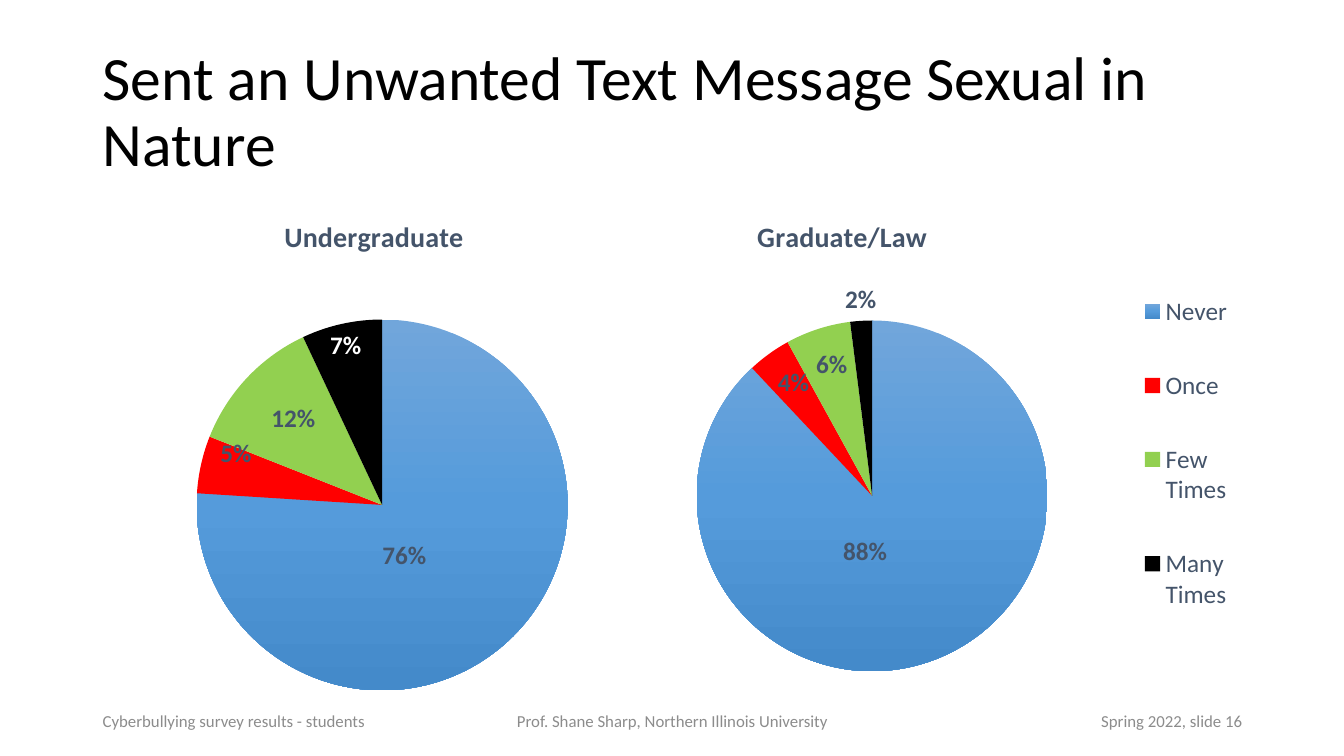
"""Build the survey slide with two pie charts about unwanted text messages."""
import math

import copy
import lxml.etree
import pptx
import pptx.chart.data
import pptx.dml.color
import pptx.enum.chart
import pptx.enum.text
import pptx.oxml.ns
import pptx.util

Inches = pptx.util.Inches
RGBColor = pptx.dml.color.RGBColor
ALIGN = pptx.enum.text.PP_ALIGN
LABEL_POSITION = pptx.enum.chart.XL_LABEL_POSITION
qn = pptx.oxml.ns.qn

FONT = "Calibri"
BLACK = RGBColor(0x00, 0x00, 0x00)
WHITE = RGBColor(0xFF, 0xFF, 0xFF)
GRAY = RGBColor(0x8C, 0x8C, 0x8C)
SLATE = RGBColor(0x44, 0x54, 0x6A)
RED = RGBColor(0xFF, 0x00, 0x00)
GREEN = RGBColor(0x92, 0xD0, 0x50)
BLUES = [RGBColor(0x71, 0xA6, 0xDB), RGBColor(0x55, 0x9B, 0xDB), RGBColor(0x44, 0x8A, 0xCA)]

deck = pptx.Presentation()
deck.slide_width, deck.slide_height = Inches(13.33), Inches(7.5)
slide = deck.slides.add_slide(deck.slide_layouts[6])


def add_text(text, left, top, width, height, size=12, color=GRAY, align=ALIGN.LEFT, spacing=1.0):
    frame = slide.shapes.add_textbox(
        Inches(left), Inches(top), Inches(width), Inches(height)).text_frame
    frame.word_wrap = True
    frame.vertical_anchor = pptx.enum.text.MSO_ANCHOR.MIDDLE
    paragraph = frame.paragraphs[0]
    paragraph.text, paragraph.alignment, paragraph.line_spacing = text, align, spacing
    font = paragraph.runs[0].font
    font.name, font.size, font.color.rgb = FONT, pptx.util.Pt(size), color


def set_layout(parent, index, **values):
    for old in parent.findall(qn("c:layout")):
        parent.remove(old)
    layout = lxml.etree.Element(qn("c:layout"))
    manual = lxml.etree.SubElement(layout, qn("c:manualLayout"))
    for name, value in values.items():
        lxml.etree.SubElement(manual, qn("c:" + name)).set("val", str(value))
    parent.insert(index, layout)


add_text("Sent an Unwanted Text Message Sexual in Nature", 0.92, 0.4, 11.5, 1.45,
         size=44, color=BLACK, spacing=0.9)

CHART_TOP, CHART_HEIGHT = 2, 5.09
EDGES = {"xMode": "edge", "yMode": "edge"}
pies = [
    {"title": "Undergraduate", "title_left": 2.77, "left": 0.92, "width": 5.58,
     "categories": ["1", "2", "3", "4"], "shares": [76, 5, 12, 7],
     "center": (3.79, 5.01), "radius": 1.84, "last_color": WHITE,
     "labels": [(4.01, 5.51), (2.34, 4.5), (2.91, 4.15), (3.43, 3.43)]},
    {"title": "Graduate/Law", "title_left": 7.46, "left": 5.95, "width": 6.46,
     "categories": ["Never", "Once", "Few Times", "Many Times"], "shares": [88, 4, 6, 2],
     "center": (8.65, 4.92), "radius": 1.74, "last_color": SLATE,
     "labels": [(8.58, 5.47), (7.87, 3.8), (8.25, 3.62), None]},
]

for pie in pies:
    left, width, radius = pie["left"], pie["width"], pie["radius"]
    center_x, center_y = pie["center"]
    survey = pptx.chart.data.CategoryChartData()
    survey.categories = pie["categories"]
    survey.add_series("Series 1", pie["shares"])
    chart = slide.shapes.add_chart(
        pptx.enum.chart.XL_CHART_TYPE.PIE, Inches(left), Inches(CHART_TOP),
        Inches(width), Inches(CHART_HEIGHT), survey).chart
    chart.font.name, chart.font.size, chart.font.color.rgb = FONT, pptx.util.Pt(10), BLACK

    chart.has_title = True
    chart.chart_title.text_frame.text = pie["title"]
    heading = chart.chart_title.text_frame.paragraphs[0].runs[0].font
    heading.name, heading.size, heading.bold = FONT, pptx.util.Pt(20), True
    heading.color.rgb = SLATE
    set_layout(chart.chart_title._element, 1, **EDGES,
               x=(pie["title_left"] - left) / width, y=0.02)

    plot = chart.plots[0]
    plot.vary_by_categories = True
    set_layout(plot._element.getparent(), 0, layoutTarget="inner", **EDGES,
               x=(center_x - radius - left) / width,
               y=(center_y - radius - CHART_TOP) / CHART_HEIGHT,
               w=2 * radius / width, h=2 * radius / CHART_HEIGHT)

    chart.has_legend = pie["categories"][0] == "Never"
    if chart.has_legend:
        legend = chart.legend
        legend.position = pptx.enum.chart.XL_LEGEND_POSITION.RIGHT
        legend.include_in_layout = False
        legend.font.name, legend.font.size = FONT, pptx.util.Pt(18)
        legend.font.color.rgb = SLATE
        set_layout(legend._element, 1, **EDGES, x=0.82, y=0.1, w=0.16, h=0.78)

    series = plot.series[0]
    never = series.points[0].format.fill
    never.gradient()
    never.gradient_angle = 270
    stops = series._element.xpath(".//a:gsLst")[0]
    stops.insert(1, copy.deepcopy(stops[0]))
    for index, (stop, blue) in enumerate(zip(never.gradient_stops, BLUES)):
        stop.position, stop.color.rgb = index / 2, blue
    for index, color in enumerate([RED, GREEN, BLACK], start=1):
        fill = series.points[index].format.fill
        fill.solid()
        fill.fore_color.rgb = color

    turned = 0
    label_colors = [SLATE, SLATE, SLATE, pie["last_color"]]
    for index, (share, spot) in enumerate(zip(pie["shares"], pie["labels"])):
        label = series.points[index].data_label
        label.font.name, label.font.size, label.font.bold = FONT, pptx.util.Pt(18), True
        label.font.color.rgb = label_colors[index]
        label.position = LABEL_POSITION.CENTER if spot else LABEL_POSITION.OUTSIDE_END
        label_xml = series._element.xpath(".//c:dLbl")[index]
        label_xml.find(qn("c:showVal")).set("val", "0")
        label_xml.find(qn("c:showPercent")).set("val", "1")
        angle = math.radians(3.6 * (turned + share / 2))
        turned += share
        if spot:
            set_layout(label_xml, 1,
                       x=(spot[0] - center_x - radius / 2 * math.sin(angle)) / width,
                       y=(spot[1] - center_y + radius / 2 * math.cos(angle)) / CHART_HEIGHT)

add_text("Cyberbullying survey results - students", 0.92, 6.95, 3, 0.4)
add_text("Prof. Shane Sharp, Northern Illinois University", 4.42, 6.95, 4.5, 0.4,
         align=ALIGN.CENTER)
add_text("Spring 2022, slide 16", 9.42, 6.95, 3, 0.4, align=ALIGN.RIGHT)

deck.save("out.pptx")
